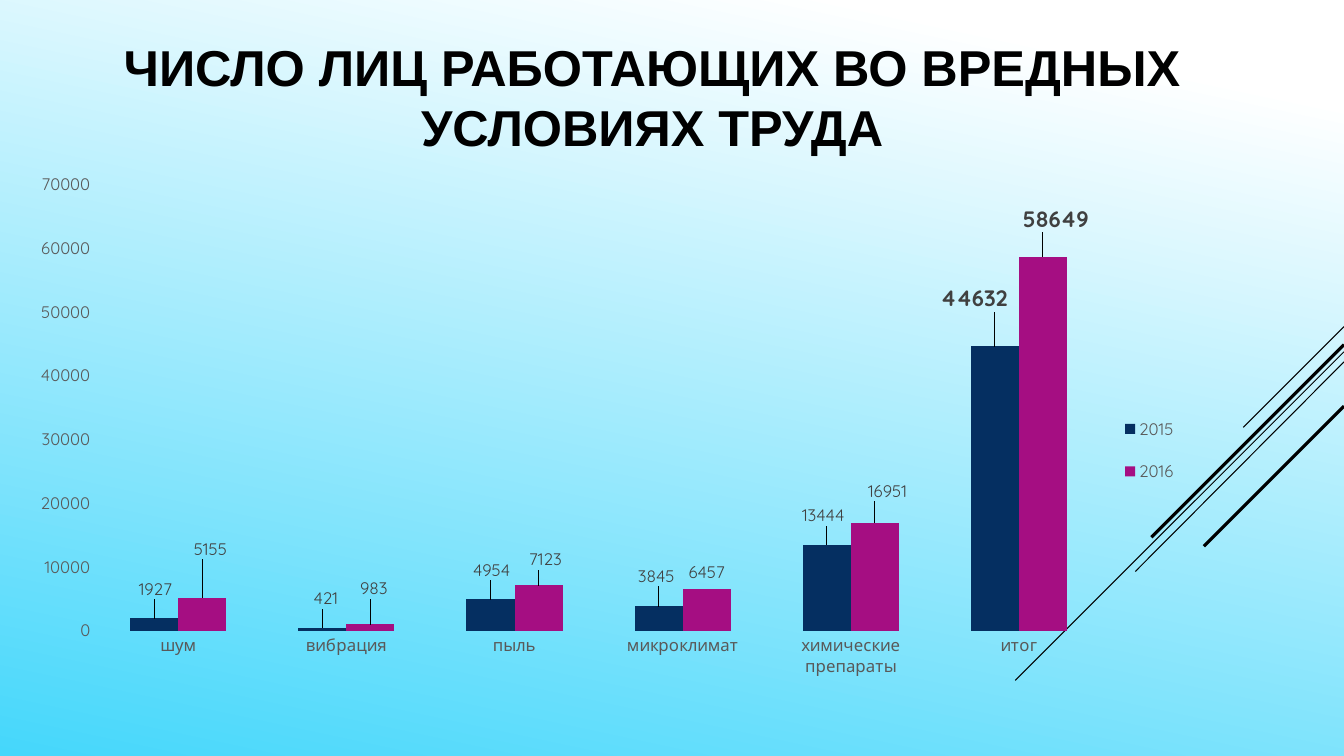
from lxml.etree import SubElement
from pptx import Presentation
from pptx.chart.data import CategoryChartData
from pptx.dml.color import RGBColor
from pptx.enum.chart import XL_CHART_TYPE as CT, XL_LABEL_POSITION as LP
from pptx.enum.chart import XL_LEGEND_POSITION as LG, XL_TICK_MARK as TM
from pptx.enum.shapes import MSO_CONNECTOR as CN
from pptx.enum.text import MSO_ANCHOR as VA, MSO_AUTO_SIZE as AS, PP_ALIGN as AL
from pptx.oxml import parse_xml
from pptx.oxml.ns import nsdecls, qn
from pptx.util import Emu, Pt

EMU_PER_PX = 9144
LINES = [(324, 1233, 424, 0.75), (349, 1007, 675, 0.75), (359, 1126, 567, 0.75),
         (342, 1142, 533, 2.25), (403, 1194, 542, 2.25)]
CATEGORIES = ["шум", "вибрация", "пыль", "микроклимат", "химические препараты", "итог"]
SERIES = [
    ("2015", "052F61", [1927, 421, 4954, 3845, 13444, 44632],
     [(1, -15), (4, -15), (1, -15), (-2, -16), (-4, -15), (-21, -30)]),
    ("2016", "A50E82", [5155, 983, 7123, 6457, 16951, 58649],
     [(8, -34), (4, -21), (7, -11), (0, -3), (13, -17), (13, -20)]),
]


def px(n):
    return Emu(n * EMU_PER_PX)


def rgb(color):
    return RGBColor.from_string(color)


def layout(**values):
    tags = "".join(f'<c:{tag} val="{val}"/>' for tag, val in values.items())
    return parse_xml(f'<c:layout {nsdecls("c")}><c:manualLayout>{tags}'
                     '</c:manualLayout></c:layout>')


class Deck:
    title_font = "Arial"
    chart_font = "Quicksand"
    ink, axis_ink, label_ink = "000000", "595959", "404040"

    def __init__(self, width, height):
        self.prs = Presentation()
        self.prs.slide_width, self.prs.slide_height = px(width), px(height)
        self.slide = self.prs.slides.add_slide(self.prs.slide_layouts[5])

    def style(self, font, name, size, color, bold=False):
        font.name, font.size, font.bold = name, Pt(size), bold
        font.color.rgb = rgb(color)

    def background(self, angle, stops):
        fill = self.slide.background.fill
        fill.gradient()
        fill.gradient_angle = 360 - angle
        for stop, (position, color) in zip(fill.gradient_stops, stops):
            stop.position = position
            stop.color.rgb = rgb(color)

    def line(self, x1, y1, x2, y2, width):
        sp = self.slide.shapes.add_connector(CN.STRAIGHT, px(x1), px(y1), px(x2), px(y2))
        sp.line.color.rgb = rgb(self.ink)
        sp.line.width = Pt(width)
        SubElement(sp._element.spPr, qn("a:effectLst"))

    def title(self, text, x, y, w, h):
        sp = self.slide.shapes.title
        sp.left, sp.top, sp.width, sp.height = px(x), px(y), px(w), px(h)
        tf = sp.text_frame
        tf.text = text
        tf.word_wrap, tf.auto_size = True, AS.NONE
        tf.vertical_anchor = VA.MIDDLE
        p = tf.paragraphs[0]
        p.alignment = AL.CENTER
        self.style(p.font, self.title_font, 36, self.ink, True)

    def chart(self, x, y, w, h):
        data = CategoryChartData()
        data.categories = CATEGORIES
        for name, _, values, _ in SERIES:
            data.add_series(name, values)
        chart = self.slide.shapes.add_chart(
            CT.COLUMN_CLUSTERED, px(x), px(y), px(w), px(h), data).chart
        self.style(chart.font, self.chart_font, 10, self.ink)
        chart.has_title = False
        plot = chart.plots[0]
        plot.vary_by_categories = False
        plot.gap_width, plot.overlap = 150, 0
        plot_area = chart._chartSpace.chart.plotArea
        for old in plot_area.findall(qn("c:layout")):
            plot_area.remove(old)
        plot_area.insert(0, layout(layoutTarget="inner", xMode="edge", yMode="edge",
                                   x=0.05, y=0.08, w=0.87, h=0.84))
        self.axes(chart)
        self.legend(chart)
        for series, (_, color, _, offsets) in zip(plot.series, SERIES):
            series.format.fill.solid()
            series.format.fill.fore_color.rgb = rgb(color)
            self.labels(series, [(dx / w, dy / h) for dx, dy in offsets])

    def axes(self, chart):
        for axis in (chart.category_axis, chart.value_axis):
            axis.major_tick_mark = axis.minor_tick_mark = TM.NONE
            axis.has_major_gridlines = False
            axis.format.line.fill.background()
            self.style(axis.tick_labels.font, self.chart_font, 12, self.axis_ink)
        axis = chart.value_axis
        axis.minimum_scale, axis.maximum_scale, axis.major_unit = 0, 70000, 10000

    def legend(self, chart):
        chart.has_legend = True
        legend = chart.legend
        legend.position = LG.RIGHT
        legend.include_in_layout = False
        self.style(legend.font, self.chart_font, 12, self.axis_ink)
        legend._element.find(qn("c:legendPos")).addnext(
            layout(xMode="edge", yMode="edge", x=0.93, y=0.48, w=0.06, h=0.2))

    def labels(self, series, offsets):
        labels = series.data_labels
        labels.show_value = True
        labels.position = LP.OUTSIDE_END
        self.style(labels.font, self.chart_font, 12, self.label_ink)
        for i, (dx, dy) in enumerate(offsets):
            total = i == len(offsets) - 1
            label = series.points[i].data_label
            self.style(label.font, self.chart_font, 16 if total else 12,
                       self.label_ink, total)
            label.position = LP.OUTSIDE_END
            idx = labels._element.findall(qn("c:dLbl"))[i].find(qn("c:idx"))
            idx.addnext(layout(x=round(dx, 3), y=round(dy, 3)))


def main():
    deck = Deck(1333, 750)
    deck.background(102, [(0.1, "FFFFFF"), (1, "45D7FB")])
    for y1, x2, y2, width in LINES:
        deck.line(1333, y1, x2, y2, width)
    deck.title("ЧИСЛО ЛИЦ РАБОТАЮЩИХ ВО ВРЕДНЫХ УСЛОВИЯХ ТРУДА", 75, 13, 1144, 165)
    deck.chart(36, 141, 1150, 530)
    deck.prs.save("out.pptx")


if __name__ == "__main__":
    main()
